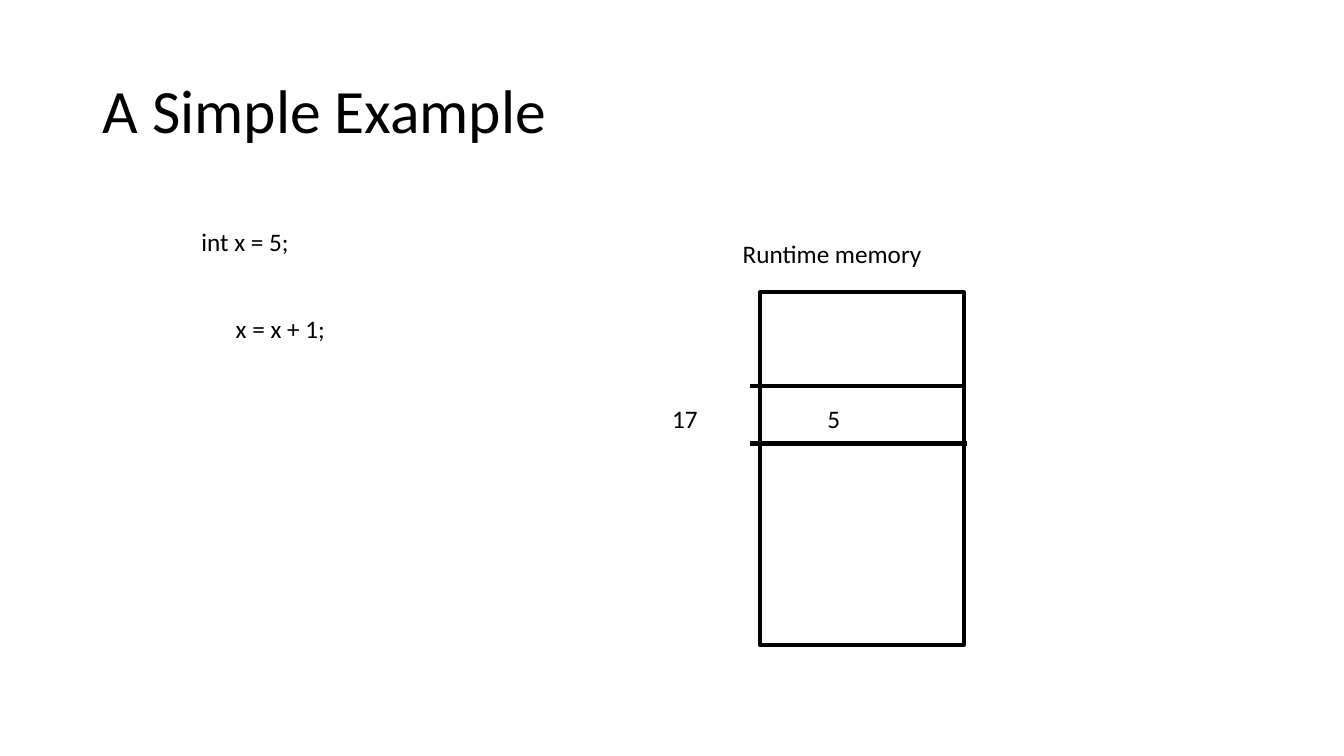
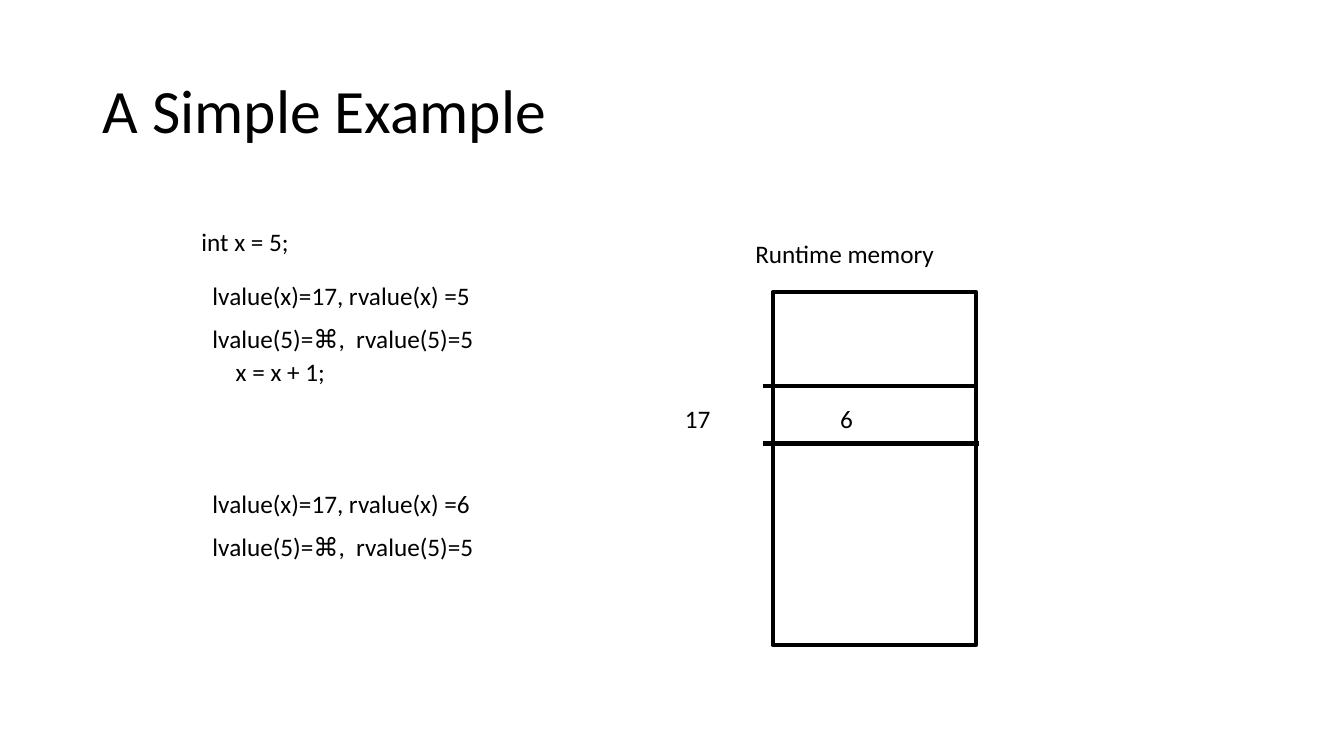
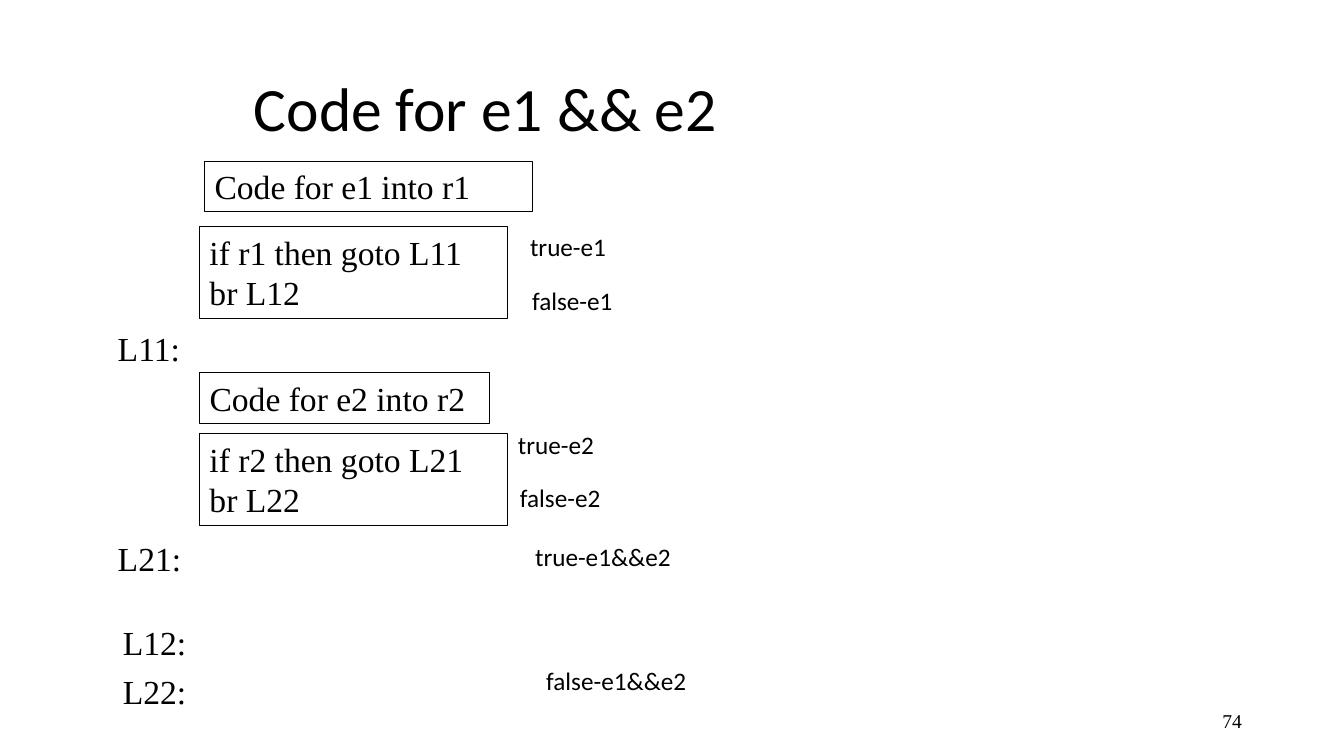
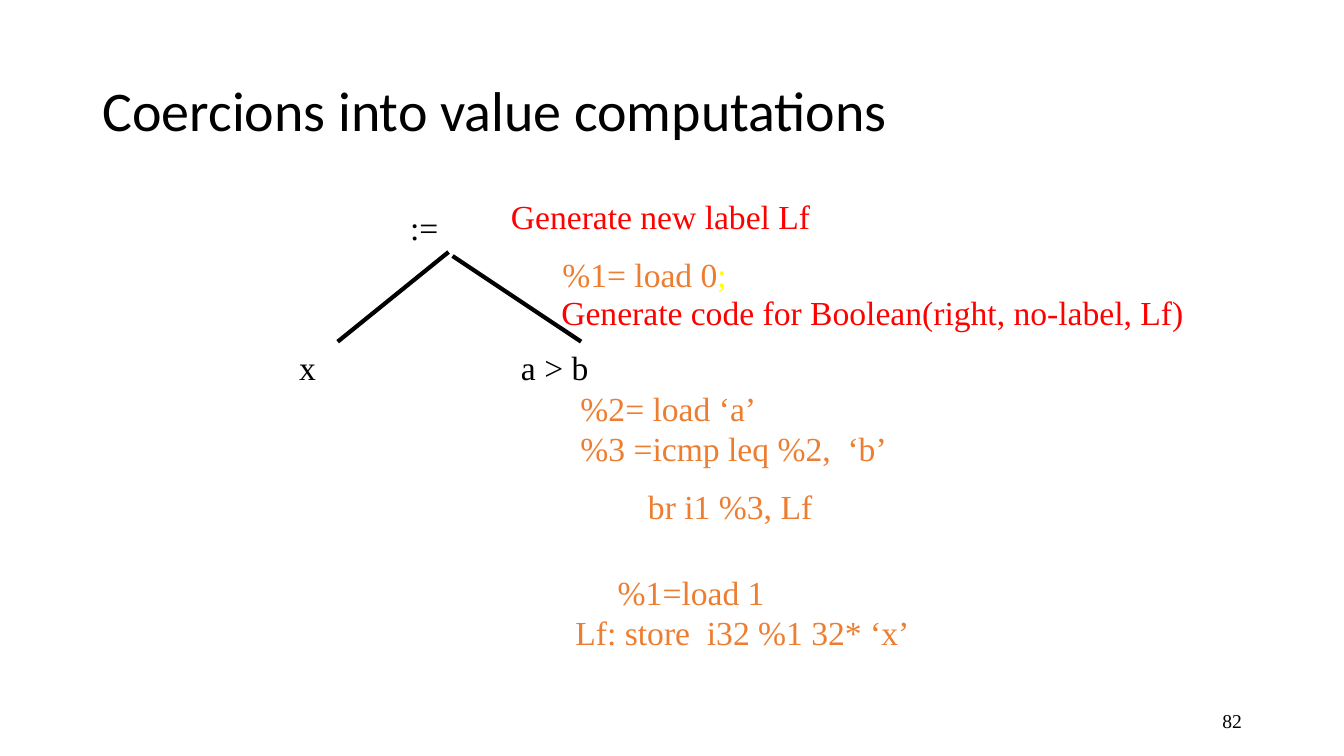
from dataclasses import dataclass

from lxml.etree import SubElement
from pptx import Presentation
from pptx.dml.color import RGBColor
from pptx.enum.shapes import MSO_CONNECTOR, MSO_SHAPE
from pptx.enum.text import MSO_ANCHOR, PP_ALIGN
from pptx.oxml.ns import qn
from pptx.util import Inches, Pt

BLACK = RGBColor(0x00, 0x00, 0x00)
RED = RGBColor(0xFF, 0x00, 0x00)
ORANGE = RGBColor(0xED, 0x7D, 0x31)
YELLOW = RGBColor(0xFF, 0xFF, 0x00)

SANS = "Calibri"
SERIF = "Times New Roman"
CODE = {"font": SERIF, "size": 24}

CELL = 0.1  # inches in one column or row of the slide grid
COLUMNS, ROWS = 133.33, 75
THICK, THIN = 3, 0.75
LABEL_ROWS, CODE_ROWS = 4, 5


def cells(count):
    return Inches(count * CELL)


@dataclass(frozen=True)
class Box:
    """An area of the slide grid, in columns and rows."""
    left: float
    top: float
    width: float
    height: float

    def inner(self, left, top, width, height):
        return Box(self.left + left, self.top + top, width, height)

    def lengths(self):
        return [cells(n) for n in (self.left, self.top, self.width, self.height)]


TITLE_BOX = Box(9.2, 4, 115, 14.5)
NUMBER_BOX = Box(94.2, 69.5, 30, 4)


@dataclass(frozen=True)
class Line:
    """A paragraph: its (text, colour) spans, space before in points, indent in inches."""
    spans: tuple
    before: float = 0
    indent: float = 0


def plain(text, before=0, indent=0):
    return Line(((text, None),), before, indent)


def fill_text(shape, lines, font=SANS, size=18, color=BLACK, align=PP_ALIGN.LEFT,
              anchor=MSO_ANCHOR.TOP, spacing=None):
    frame = shape.text_frame
    frame.word_wrap = True
    frame.vertical_anchor = anchor
    for index, line in enumerate(lines):
        line = plain(line) if isinstance(line, str) else line
        para = frame.paragraphs[0] if index == 0 else frame.add_paragraph()
        para.alignment = align
        para.space_before = Pt(line.before)
        if spacing:
            para.line_spacing = spacing
        if line.indent:
            para._p.get_or_add_pPr().set("marL", str(Inches(line.indent)))
        for text, span_color in line.spans:
            span = para.add_run()
            span.text = text
            span.font.name = font
            span.font.size = Pt(size)
            span.font.color.rgb = span_color or color


def add_text(page, box, *lines, **text_format):
    shape = page.shapes.add_textbox(*box.lengths())
    fill_text(shape, lines, **text_format)
    return shape


def add_frame(shapes, box, weight):
    frame = shapes.add_shape(MSO_SHAPE.RECTANGLE, *box.lengths())
    frame.shadow.inherit = False
    frame.fill.background()
    frame.line.color.rgb = BLACK
    frame.line.width = Pt(weight)
    return frame


def add_code_box(page, box, *lines):
    fill_text(add_frame(page.shapes, box, THIN), lines, **CODE)


def add_line(shapes, start, end):
    line = shapes.add_connector(MSO_CONNECTOR.STRAIGHT, *map(cells, start + end))
    line.line.color.rgb = BLACK
    line.line.width = Pt(THICK)
    SubElement(line._element.spPr, qn("a:effectLst"))
    return line


def add_page(deck, title, box=TITLE_BOX, size=44, number=None):
    page = deck.slides.add_slide(deck.slide_layouts[6])
    add_text(page, box, title, size=size, anchor=MSO_ANCHOR.MIDDLE, spacing=0.9)
    if number:
        add_text(page, NUMBER_BOX, number, font=SERIF, size=14,
                 align=PP_ALIGN.RIGHT, anchor=MSO_ANCHOR.MIDDLE)
    return page


def memory_diagram(page, box, address, value):
    add_text(page, box.inner(7, 0, 34, LABEL_ROWS), "Runtime memory")
    group = page.shapes.add_group_shape()
    add_frame(group.shapes, box.inner(9.7, 5.8, 20.2, 35), THICK)
    for row, width in ((15.1, 21.3), (20.8, 21.5)):
        edge = box.inner(8.7, row, width, 0)
        add_line(group.shapes, (edge.left, edge.top), (edge.left + width, edge.top))
    add_text(page, box.inner(0, 16.3, 9.2, LABEL_ROWS), address)
    add_text(page, box.inner(15.4, 16.3, 8.2, LABEL_ROWS), value)


def example_page(deck, memory_left, value, statement_gap, rvalues=()):
    """The two statements, the values of x after each, and the memory."""
    page = add_page(deck, "A Simple Example")
    statements = Box(19, 22, 30.7, 17.7)
    add_text(page, statements, "int x = 5;",
             plain("x = x + 1;", before=statement_gap, indent=0.34))
    memory_diagram(page, Box(memory_left, 23.2, 41, 40.8), "17", value)
    for index, rvalue in enumerate(rvalues):
        add_text(page, statements.inner(1.1, 5.3 + 20.7 * index, 43.3, 8.6),
                 f"lvalue(x)=17, rvalue(x) ={rvalue}",
                 plain("lvalue(5)=⌘,  rvalue(5)=5", before=9))


def operand_code(page, number, code_box, test_box, branch_box):
    """Evaluation of one operand, its test and the names of both branches."""
    add_code_box(page, code_box, f"Code for e{number} into r{number}")
    add_code_box(page, test_box, f"if r{number} then goto L{number}1", f"br L{number}2")
    add_text(page, branch_box, f"true-e{number}")
    add_text(page, branch_box.inner(0.2, 5.3, branch_box.width, branch_box.height),
             f"false-e{number}")


def conjunction_page(deck):
    page = add_page(deck, "Code for e1 && e2", box=Box(24.2, 4.8, 85, 12.5), number="74")
    operand_code(page, 1, Box(20.3, 16, 32.5, CODE_ROWS), Box(19.8, 22.5, 30.6, 9.1),
                 Box(51.6, 22.5, 13.9, LABEL_ROWS))
    operand_code(page, 2, Box(19.8, 37, 28.8, CODE_ROWS), Box(19.8, 43, 30.6, 9.1),
                 Box(50.4, 42.1, 13.9, LABEL_ROWS))
    for label, left, top in (("L11:", 10.7, 32), ("L21:", 10.7, 52.9),
                             ("L12:", 11.2, 61.2), ("L22:", 11.2, 66.1)):
        add_text(page, Box(left, top, 23, CODE_ROWS), label, **CODE)
    for result, left, top in (("true-e1&&e2", 52.1, 53.2), ("false-e1&&e2", 53.2, 65.5)):
        add_text(page, Box(left, top, 19.9, LABEL_ROWS), result)


def assignment_tree(page, box):
    root = add_text(page, box.inner(11, 0, 9.6, CODE_ROWS), ":=", **CODE)
    target = add_text(page, box.inner(0, 13.9, 9.6, CODE_ROWS), "x", **CODE)
    source = add_text(page, box.inner(22, 13.9, 13.9, CODE_ROWS), "a > b", **CODE)
    start = (box.left + 15.8, box.top + CODE_ROWS)
    left_branch = add_line(page.shapes, start, start)
    left_branch.begin_connect(root, 2)
    left_branch.end_connect(target, 0)
    start = (box.left + 16.2, box.top + 5.4)
    right_branch = add_line(page.shapes, start, start)
    right_branch.end_connect(source, 0)


def generated_code(page, box):
    add_text(page, box.inner(0, 0, 37.9, CODE_ROWS), "Generate new label Lf",
             color=RED, **CODE)
    add_text(page, box.inner(5.1, 5.8, 37.9, CODE_ROWS),
             Line((("%1= load 0", ORANGE), (";", YELLOW))), **CODE)
    add_text(page, box.inner(5, 9.6, 64.2, CODE_ROWS),
             "Generate code for Boolean(right, no-label, Lf)", color=RED, **CODE)
    add_text(page, box.inner(6.9, 19.1, 37.9, 15.1), "%2= load ‘a’",
             "%3 =icmp leq %2,  ‘b’", plain("br i1 %3, Lf", before=12, indent=0.67),
             color=ORANGE, **CODE)
    add_text(page, box.inner(6.4, 37.3, 42.5, 9.1), plain("%1=load 1", indent=0.42),
             "Lf: store  i32 %1 32* ‘x’", color=ORANGE, **CODE)


def coercion_page(deck):
    page = add_page(deck, "Coercions into value computations", size=40, number="82")
    assignment_tree(page, Box(28.7, 20, 35.9, 18.9))
    generated_code(page, Box(49.7, 18.9, 69.2, 46.4))


def main():
    deck = Presentation()
    deck.slide_width, deck.slide_height = cells(COLUMNS), cells(ROWS)
    example_page(deck, 65.7, "5", statement_gap=40)
    example_page(deck, 66.95, "6", statement_gap=71, rvalues=(5, 6))
    conjunction_page(deck)
    coercion_page(deck)
    deck.save("out.pptx")


if __name__ == "__main__":
    main()
